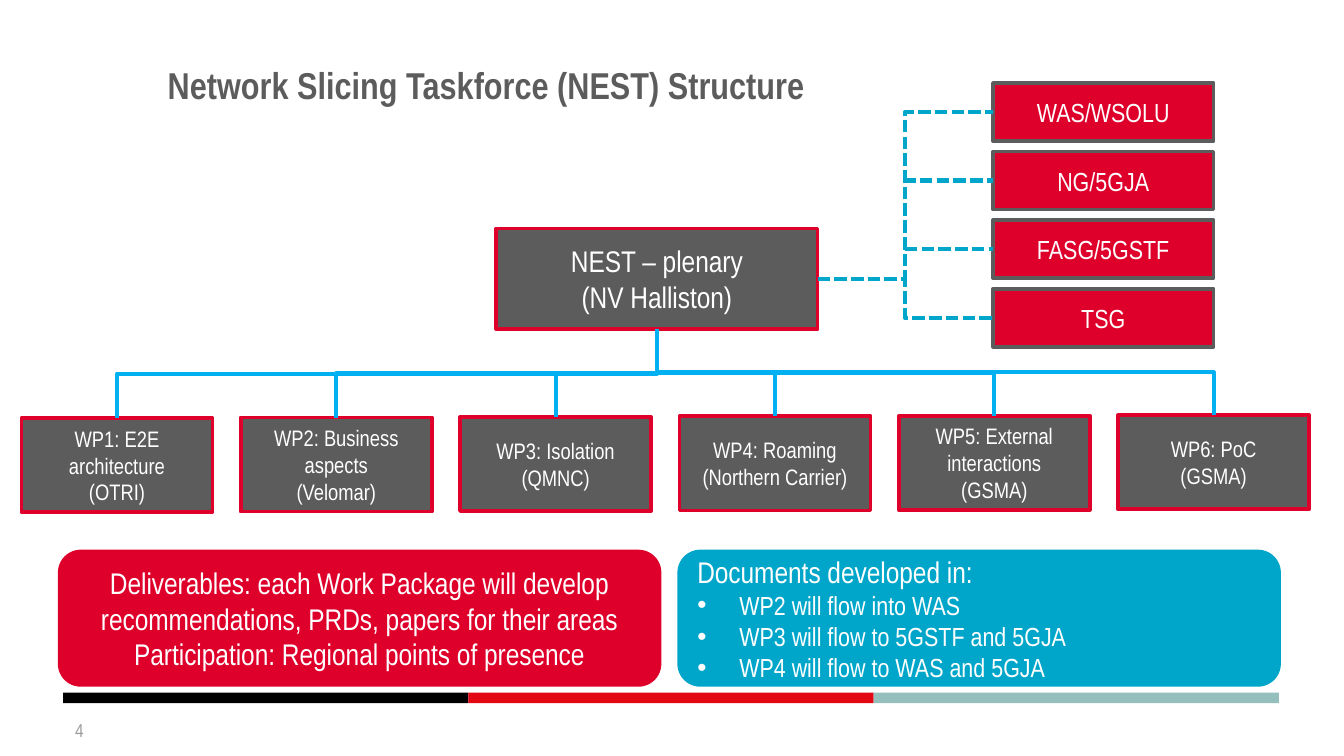
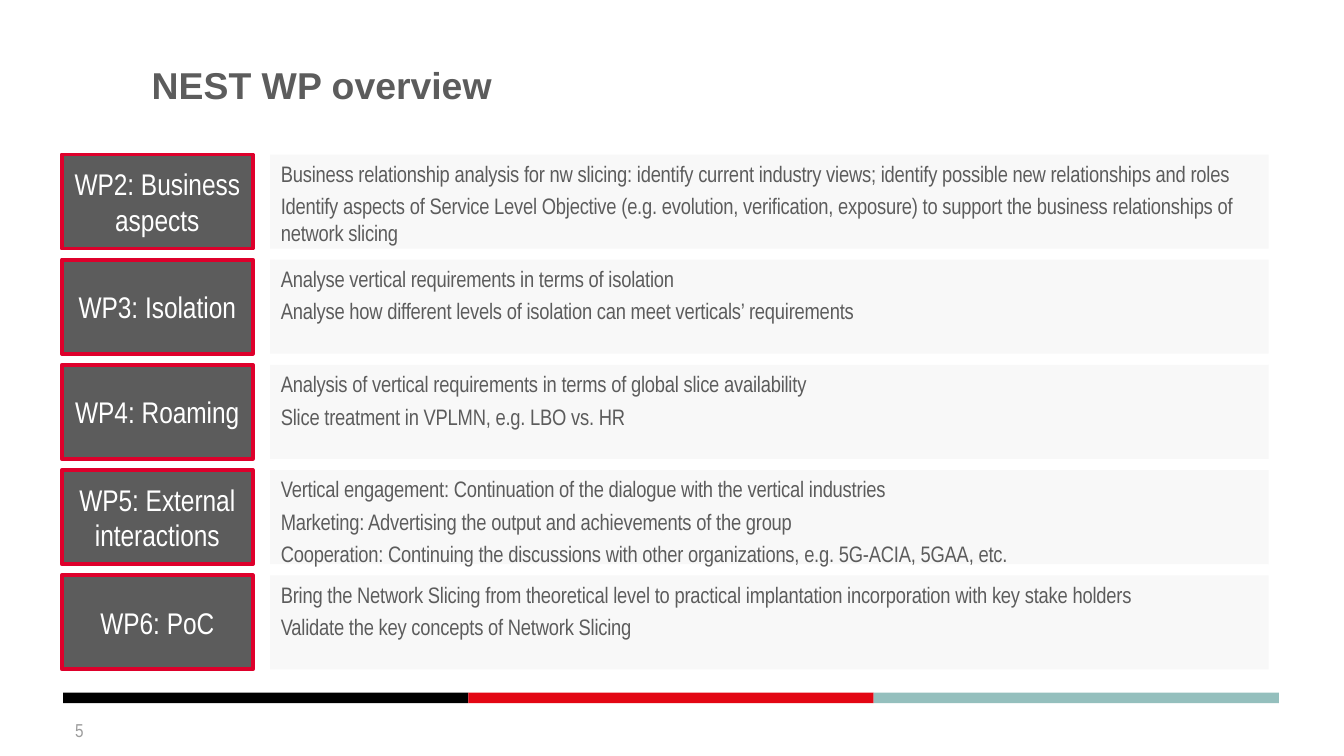
import pptx
import pptx.util
import pptx.dml.color
import pptx.enum.dml
import pptx.enum.shapes
import pptx.enum.text
from lxml import etree
from pptx.oxml.ns import qn

Pt = pptx.util.Pt
SHAPE = pptx.enum.shapes.MSO_SHAPE
ALIGN = pptx.enum.text.PP_ALIGN
ANCHOR = pptx.enum.text.MSO_ANCHOR

COLOURS = {
    "grey": "5C5C5C", "red": "DE002B", "blue": "00A6C9", "sky": "00B0F0",
    "white": "FFFFFF", "panel": "F2F2F2", "number": "9C9C9C",
    "band black": "000000", "band red": "E30613", "band teal": "94BFBD",
}
NARROW = "Arial Narrow"
BANDS = ["band black", "band red", "band teal"]

STRUCTURE_TITLE = "Network Slicing Taskforce (NEST) Structure"
PLENARY = ["NEST – plenary", "(NV Halliston)"]
GROUPS = ["WAS/WSOLU", "NG/5GJA", "FASG/5GSTF", "TSG"]
PACKAGES = [
    ["WP1: E2E architecture", "(OTRI)"],
    ["WP2: Business aspects", "(Velomar)"],
    ["WP3: Isolation", "(QMNC)"],
    ["WP4: Roaming", "(Northern Carrier)"],
    ["WP5: External interactions", "(GSMA)"],
    ["WP6: PoC", "(GSMA)"],
]
DELIVERABLES = [
    "Deliverables: each Work Package will develop recommendations, PRDs, papers for their areas",
    "Participation: Regional points of presence",
]
DOCUMENTS_HEADING = "Documents developed in:"
DOCUMENTS = [
    "WP2 will flow into WAS",
    "WP3 will flow to 5GSTF and 5GJA",
    "WP4 will flow to WAS and 5GJA",
]

OVERVIEW_TITLE = "NEST WP overview"
OVERVIEW = [
    ("WP2: Business aspects", [
        "Business relationship analysis for nw slicing: identify current industry views; "
        "identify possible new relationships and roles",
        "Identify aspects of Service Level Objective (e.g. evolution, verification, exposure) "
        "to support the business relationships of network slicing",
    ]),
    ("WP3: Isolation", [
        "Analyse vertical requirements in terms of isolation",
        "Analyse how different levels of isolation can meet verticals’ requirements",
    ]),
    ("WP4: Roaming", [
        "Analysis of vertical requirements in terms of global slice availability",
        "Slice treatment in VPLMN, e.g. LBO vs. HR",
    ]),
    ("WP5: External interactions", [
        "Vertical engagement: Continuation of the dialogue with the vertical industries",
        "Marketing: Advertising the output and achievements of the group",
        "Cooperation: Continuing the discussions with other organizations, "
        "e.g. 5G-ACIA, 5GAA, etc.",
    ]),
    ("WP6: PoC", [
        "Bring the Network Slicing from theoretical level to practical implantation "
        "incorporation with key stake holders",
        "Validate the key concepts of Network Slicing",
    ]),
]

PACKAGE_SIZE = (102.4, 50.4)
TIGHT = (5.76, 3.6)
USUAL = (7.2, 3.6)


def rgb(name):
    return pptx.dml.color.RGBColor.from_string(COLOURS[name])


def write(shape, lines, size, colour="white", font=NARROW, bold=False,
          align=ALIGN.CENTER, anchor=ANCHOR.MIDDLE, insets=USUAL, gap=0):
    """Fill a shape with one paragraph per line; gap is the space between them."""
    frame = shape.text_frame
    frame.word_wrap = True
    frame.vertical_anchor = anchor
    frame.margin_left = frame.margin_right = Pt(insets[0])
    frame.margin_top = frame.margin_bottom = Pt(insets[1])
    for index, line in enumerate(lines):
        para = frame.add_paragraph() if index else frame.paragraphs[0]
        para.alignment = align
        if index and gap:
            para.space_before = Pt(gap)
        span = para.add_run()
        span.text = line
        span.font.name = font
        span.font.size = Pt(size)
        span.font.bold = bold
        span.font.color.rgb = rgb(colour)
    return frame.paragraphs


def add_box(page, left, top, width, height, fill, line=None, kind=SHAPE.RECTANGLE):
    box = page.shapes.add_shape(kind, Pt(left), Pt(top), Pt(width), Pt(height))
    box.shadow.inherit = False
    box.fill.solid()
    box.fill.fore_color.rgb = rgb(fill)
    if line:
        box.line.color.rgb = rgb(line)
        box.line.width = Pt(2)
    else:
        box.line.fill.background()
    return box


def add_package(page, left, top, lines, size):
    box = add_box(page, left, top, *PACKAGE_SIZE, "grey", "red")
    write(box, lines, size, insets=TIGHT)
    return box


def add_label(page, left, top, width, height, text, size, **style):
    label = page.shapes.add_textbox(Pt(left), Pt(top), Pt(width), Pt(height))
    write(label, [text], size, align=ALIGN.LEFT, **style)


def join(page, start, start_site, end, end_site, colour):
    """Join two boxes with an elbow connector."""
    elbow = page.shapes.add_connector(pptx.enum.shapes.MSO_CONNECTOR.ELBOW, 0, 0, 0, 0)
    elbow.begin_connect(start, start_site)
    elbow.end_connect(end, end_site)
    elbow.line.color.rgb = rgb(colour)
    elbow.line.width = Pt(2.25)
    etree.SubElement(elbow._element.spPr, qn("a:effectLst"))
    return elbow


def turn_downwards(elbow):
    """Make an elbow leave and arrive vertically, by a quarter turn of its frame."""
    across, down = elbow.end_x - elbow.begin_x, elbow.end_y - elbow.begin_y
    middle_x = (elbow.begin_x + elbow.end_x) // 2
    middle_y = (elbow.begin_y + elbow.end_y) // 2
    elbow.width, elbow.height = down, abs(across)
    elbow.left, elbow.top = middle_x - down // 2, middle_y - abs(across) // 2
    frame = elbow._element.spPr.find(qn("a:xfrm"))
    for flip in ("flipH", "flipV"):
        frame.attrib.pop(flip, None)
    frame.set("rot", "5400000" if across < 0 else "16200000")
    if across > 0:
        frame.set("flipH", "1")


def add_bullet(para):
    properties = para._p.get_or_add_pPr()
    properties.set("marL", str(Pt(22.5)))
    properties.set("indent", str(-Pt(22.5)))
    etree.SubElement(properties, qn("a:buFont"), typeface="Arial")
    etree.SubElement(properties, qn("a:buChar"), char="•")


def add_page(deck, title, number, left, font):
    """Start a page with its title, the three bands and the page number."""
    page = deck.slides.add_slide(deck.slide_layouts[6])
    for index, band in enumerate(BANDS):
        add_box(page, 33.84 + 217.1 * index, 371, 217.1, 5.76, band)
    add_label(page, left, 30, 515, 52.5, title, 20, colour="grey", font=font,
              bold=True, anchor=ANCHOR.TOP)
    add_label(page, 33.1, 380.2, 168, 21.6, str(number), 10, colour="number")
    return page


def build_structure(deck):
    page = add_page(deck, STRUCTURE_TITLE, 4, 82.8, NARROW)
    plenary = add_box(page, 265.9, 122.4, 172.1, 54, "grey", "red")
    write(plenary, PLENARY, 16, insets=TIGHT)

    for index, name in enumerate(GROUPS):
        group = add_box(page, 532, 44.5 + 36.75 * index, 118.1, 31, "red", "grey")
        write(group, [name], 14)
        elbow = join(page, plenary, 3, group, 1, "blue")
        elbow.line.dash_style = pptx.enum.dml.MSO_LINE.SQUARE_DOT

    for index, lines in enumerate(PACKAGES):
        package = add_package(page, 11.5 + 117.5 * index, 224 - 0.3 * index, lines, 12)
        turn_downwards(join(page, plenary, 2, package, 0, "sky"))

    deliverables, documents = [
        add_box(page, left, 294.5, 323.3, 73.4, fill, kind=SHAPE.ROUNDED_RECTANGLE)
        for left, fill in ((31, "red"), (362.9, "blue"))]
    write(deliverables, DELIVERABLES, 16)
    heading, *items = write(documents, [DOCUMENTS_HEADING] + DOCUMENTS, 14, align=ALIGN.LEFT)
    heading.runs[0].font.size = Pt(16)
    for para in items:
        add_bullet(para)


def build_overview(deck):
    page = add_page(deck, OVERVIEW_TITLE, 5, 74.2, "Arial")
    for index, (name, tasks) in enumerate(OVERVIEW):
        top = 82.8 + 56.35 * index
        add_package(page, 33.1, top, [name], 16)
        panel = add_box(page, 144.7, top, 535, 50.4, "panel")
        shade = panel._element.spPr.find(qn("a:solidFill"))[0]
        etree.SubElement(shade, qn("a:alpha"), val="50000")
        paras = write(panel, tasks, 12, colour="grey", align=ALIGN.LEFT,
                      anchor=ANCHOR.TOP, insets=(5.76, 2.88), gap=3)
        for para in paras:
            para.runs[0].font._element.set("spc", "-10")


def main():
    deck = pptx.Presentation()
    deck.slide_width, deck.slide_height = Pt(720), Pt(405)
    build_structure(deck)
    build_overview(deck)
    deck.save("out.pptx")


if __name__ == "__main__":
    main()
